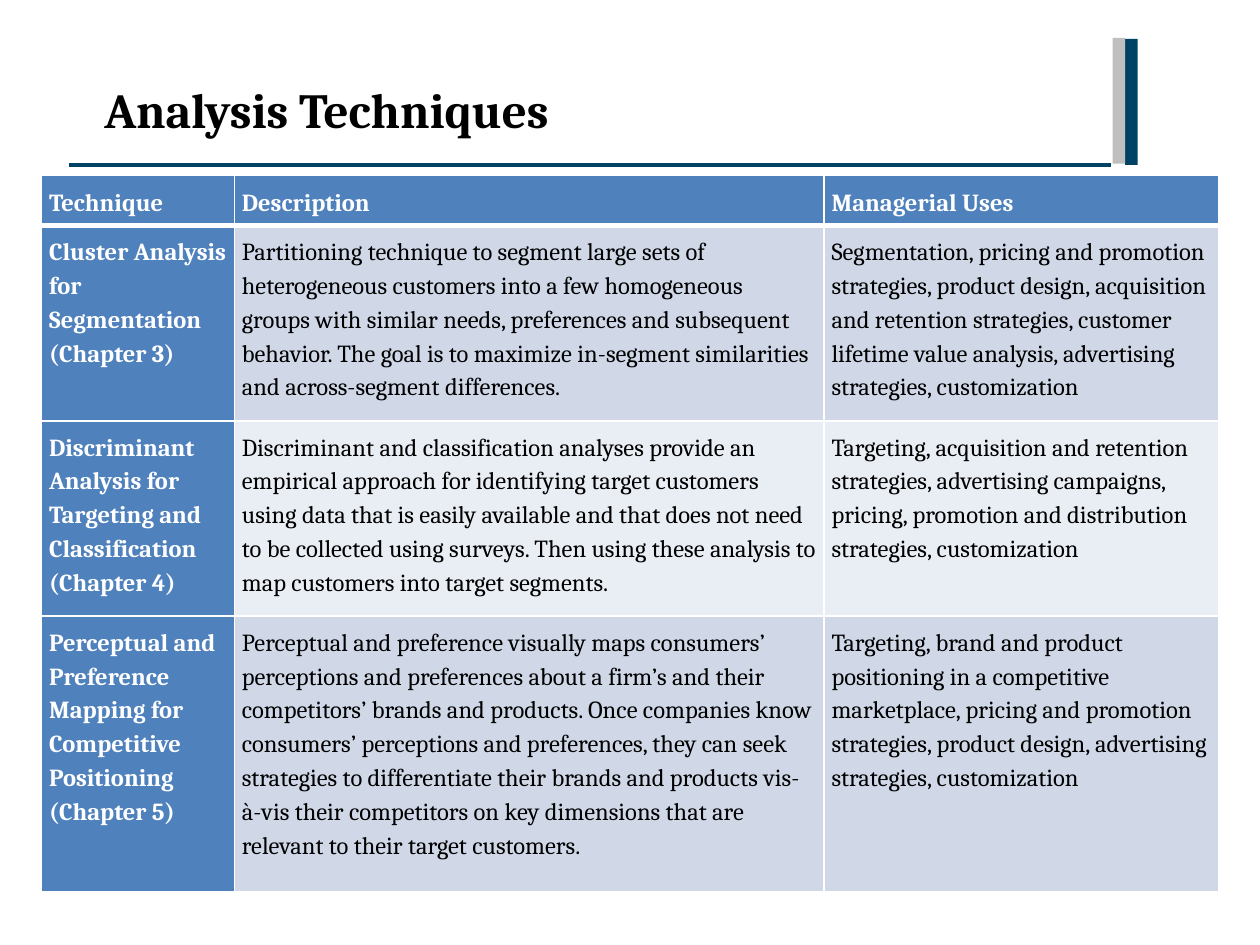
import pptx
import pptx.dml.color
import pptx.enum.shapes
import pptx.enum.text
import pptx.oxml.ns
import pptx.util
from lxml import etree

Inches = pptx.util.Inches
Pt = pptx.util.Pt
RGBColor = pptx.dml.color.RGBColor
MIDDLE = pptx.enum.text.MSO_ANCHOR.MIDDLE
TOP = pptx.enum.text.MSO_ANCHOR.TOP
qn = pptx.oxml.ns.qn

NAVY = RGBColor(0x00, 0x42, 0x64)
GRAY = RGBColor(0xBF, 0xBF, 0xBF)
BLACK = RGBColor(0x00, 0x00, 0x00)
WHITE = RGBColor(0xFF, 0xFF, 0xFF)
BLUE = RGBColor(0x4F, 0x81, 0xBD)
BANDS = [RGBColor(0xD0, 0xD8, 0xE8), RGBColor(0xE9, 0xED, 0xF4)]

TITLE_FONT = {"name": "Cambria", "size": Pt(28), "bold": True}
HEAD_FONT = {"name": "Cambria", "size": Pt(14), "bold": True}
BODY_FONT = {"name": "Cambria", "size": Pt(14), "bold": False}

COL_WIDTHS = [1.53, 4.68, 3.13]
ROW_HEIGHTS = [0.39, 1.55, 1.55, 2.19]
ROWS = [
    ["Technique", "Description", "Managerial Uses"],
    [
        "Cluster Analysis for Segmentation (Chapter 3)",
        "Partitioning technique to segment large sets of heterogeneous customers "
        "into a few homogeneous groups with similar needs, preferences and "
        "subsequent behavior. The goal is to maximize in-segment similarities and "
        "across-segment differences.",
        "Segmentation, pricing and promotion strategies, product design, "
        "acquisition and retention strategies, customer lifetime value analysis, "
        "advertising strategies, customization",
    ],
    [
        "Discriminant Analysis for Targeting and Classification (Chapter 4)",
        "Discriminant and classification analyses provide an empirical approach "
        "for identifying target customers using data that is easily available and "
        "that does not need to be collected using surveys. Then using these "
        "analysis to map customers into target segments.",
        "Targeting, acquisition and retention strategies, advertising campaigns, "
        "pricing, promotion and distribution strategies, customization",
    ],
    [
        "Perceptual and Preference Mapping for Competitive Positioning (Chapter 5)",
        "Perceptual and preference visually maps consumers’ perceptions and "
        "preferences about a firm’s and their competitors’ brands and products. "
        "Once companies know consumers’ perceptions and preferences, they can seek "
        "strategies to differentiate their brands and products vis-à-vis their "
        "competitors on key dimensions that are relevant to their target customers.",
        "Targeting, brand and product positioning in a competitive marketplace, "
        "pricing and promotion strategies, product design, advertising strategies, "
        "customization",
    ],
]


def add_run(p, text, fmt, color):
    r = p.add_run()
    r.text = text
    for name, value in fmt.items():
        setattr(r.font, name, value)
    r.font.color.rgb = color


def add_rule(s, x1, x2, y):
    line = s.shapes.add_connector(
        pptx.enum.shapes.MSO_CONNECTOR.STRAIGHT,
        Inches(x1), Inches(y), Inches(x2), Inches(y))
    line.line.color.rgb = NAVY
    line.line.width = Pt(2)
    etree.SubElement(line._element.spPr, qn("a:effectLst"))


def add_bar(s, left, top, color):
    sp = s.shapes.add_shape(
        pptx.enum.shapes.MSO_SHAPE.RECTANGLE,
        Inches(left), Inches(top), Inches(0.1), Inches(1))
    sp.shadow.inherit = False
    sp.fill.solid()
    sp.fill.fore_color.rgb = color
    sp.line.fill.background()


def add_title(s, text):
    sp = s.shapes.add_textbox(Inches(0.73), Inches(0.58), Inches(5), Inches(0.57))
    tf = sp.text_frame
    tf.word_wrap = True
    add_run(tf.paragraphs[0], text, TITLE_FONT, BLACK)


def set_borders(cell, widths):
    tcPr = cell._tc.get_or_add_tcPr()
    for side, width in widths.items():
        ln = etree.SubElement(tcPr, qn(f"a:ln{side}"), w=str(Pt(width)))
        fill = etree.SubElement(ln, qn("a:solidFill"))
        etree.SubElement(fill, qn("a:srgbClr"), val=str(WHITE))


def fill_cell(cell, text, row, col):
    is_head = row == 0 or col == 0
    set_borders(cell, {"L": 1, "R": 1, "T": 3 if row == 1 else 1,
                       "B": 3 if row == 0 else 1})
    cell.fill.solid()
    cell.fill.fore_color.rgb = BLUE if is_head else BANDS[(row - 1) % 2]
    for side in ("left", "right", "top", "bottom"):
        setattr(cell, f"margin_{side}", Inches(0.06))
    cell.vertical_anchor = MIDDLE if row == 0 else TOP
    p = cell.text_frame.paragraphs[0]
    p.line_spacing = 1.2
    add_run(p, text, HEAD_FONT if is_head else BODY_FONT,
            WHITE if is_head else BLACK)


def add_techniques_table(s):
    table = s.shapes.add_table(
        len(ROWS), len(COL_WIDTHS), Inches(0.33), Inches(1.39),
        Inches(sum(COL_WIDTHS)), Inches(sum(ROW_HEIGHTS))).table
    for column, width in zip(table.columns, COL_WIDTHS):
        column.width = Inches(width)
    for row, height in zip(table.rows, ROW_HEIGHTS):
        row.height = Inches(height)
    for i, texts in enumerate(ROWS):
        for j, text in enumerate(texts):
            fill_cell(table.cell(i, j), text, i, j)


def main():
    prs = pptx.Presentation()
    prs.slide_width = Inches(10)
    prs.slide_height = Inches(7.5)
    s = prs.slides.add_slide(prs.slide_layouts[6])
    add_rule(s, 0.55, 8.82, 1.31)
    add_bar(s, 8.93, 0.31, NAVY)
    add_bar(s, 8.83, 0.3, GRAY)
    add_title(s, "Analysis Techniques")
    add_techniques_table(s)
    prs.save("out.pptx")


if __name__ == "__main__":
    main()
